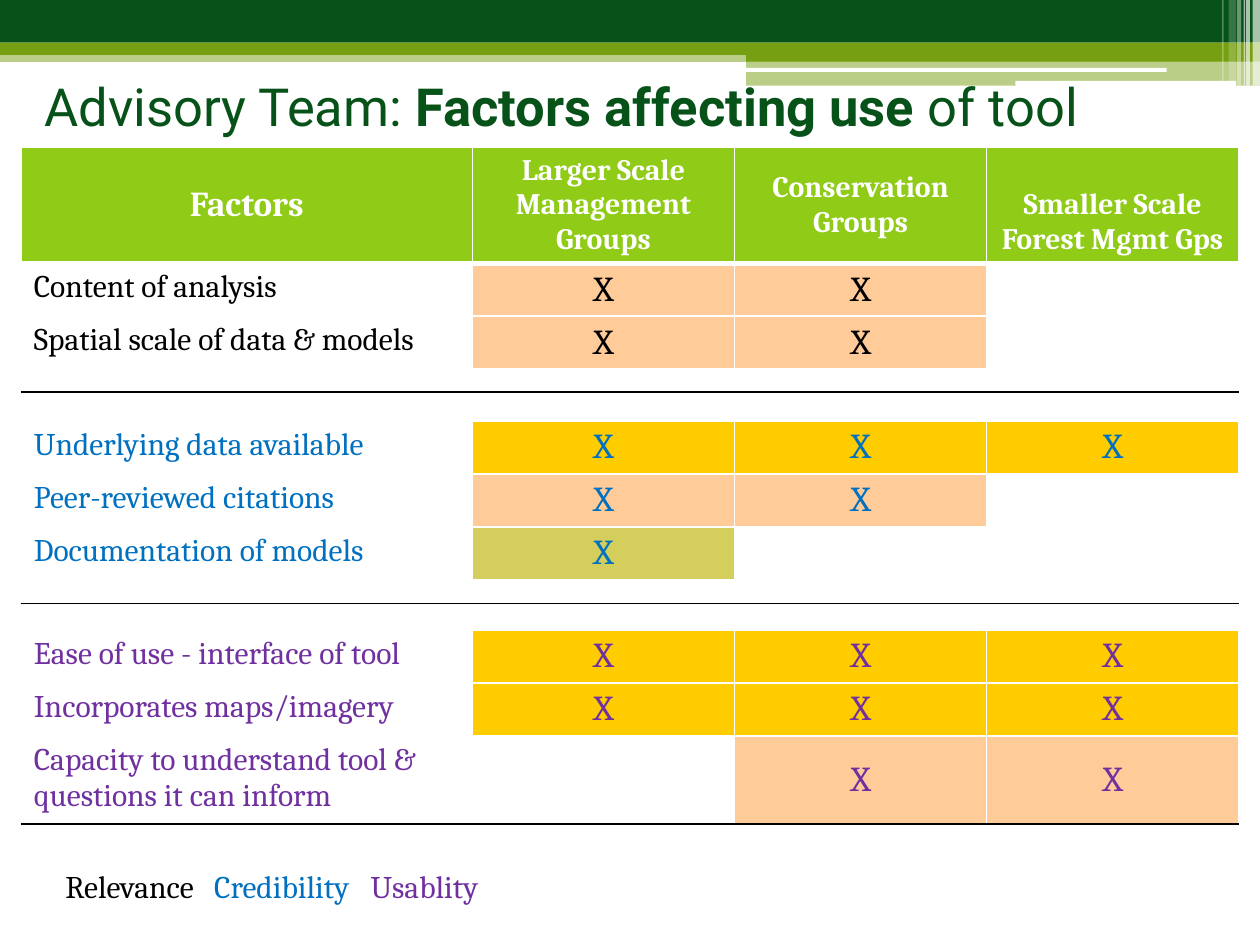
from lxml.etree import SubElement
from pptx import Presentation
from pptx.dml.color import RGBColor
from pptx.enum.shapes import MSO_SHAPE as Shape
from pptx.enum.text import MSO_ANCHOR as Anchor, PP_ALIGN as Align
from pptx.oxml import parse_xml
from pptx.oxml.ns import nsdecls, qn
from pptx.util import Cm, Pt

COLORS = {
    "forest": "065218", "olive": "769F11", "lime": "8FCB17", "white": "FFFFFF",
    "black": "000000", "blue": "0070C0", "purple": "7030A0",
    "peach": "FFCC99", "gold": "FFCC00", "moss": "D4CF5D",
}
BODY_FONT = "Cambria"
HEADERS = [
    ("Factors", 20, Anchor.MIDDLE),
    ("Larger Scale Management Groups", 17, Anchor.MIDDLE),
    ("Conservation Groups", 17, Anchor.MIDDLE),
    ("Smaller Scale Forest Mgmt Gps", 17, Anchor.BOTTOM),
]
GROUPS = [
    ("Relevance", "black", [
        ("Content of analysis", ["peach", "peach", None]),
        ("Spatial scale of data & models", ["peach", "peach", None]),
    ]),
    ("Credibility", "blue", [
        ("Underlying data available", ["gold", "gold", "gold"]),
        ("Peer-reviewed citations", ["peach", "peach", None]),
        ("Documentation of models", ["moss", None, None]),
    ]),
    ("Usablity", "purple", [
        ("Ease of use - interface of tool", ["gold", "gold", "gold"]),
        ("Incorporates maps/imagery", ["gold", "gold", "gold"]),
        ("Capacity to understand tool & questions it can inform",
         [None, "peach", "peach"]),
    ]),
]
COLUMN_WIDTHS = [9.09, 5.29, 5.08, 5.08]
HEADER_HEIGHT, ROW_HEIGHT, LAST_HEIGHT = 2.3, 1.06, 1.78
GAP_HEIGHTS = [(0.46, 0.58), (0.48, 0.53)]


def rgb(name):
    """Return the named colour."""
    return RGBColor.from_string(COLORS[name])


def style_span(span, size, color, font=BODY_FONT, bold=False):
    """Format one run of text."""
    span.font.size, span.font.name, span.font.bold = Pt(size), font, bold
    span.font.color.rgb = rgb(color)


def add_bar(page, box, color, opacity=100, kind=Shape.RECTANGLE):
    """Add a borderless bar with the given opacity in percent."""
    bar = page.shapes.add_shape(kind, *map(Cm, box))
    bar.shadow.inherit = False
    bar.line.fill.background()
    bar.fill.solid()
    bar.fill.fore_color.rgb = rgb(color)
    if opacity < 100:
        tint = bar.fill._xPr.find(".//" + qn("a:srgbClr"))
        SubElement(tint, qn("a:alpha"), val=str(opacity * 1000))


def add_banner(page, box):
    """Draw the layered green banner with its light stripes."""
    left, top, width, height = box
    split = left + 15.04
    right = width - 15.04
    add_bar(page, (left, top + 1.02, width, 0.23), "olive", 50)
    add_bar(page, (left, top, width, 0.86), "forest")
    add_bar(page, (left, top + 0.86, width, 0.25), "olive")
    add_bar(page, (split, top + 0.99, right, 0.25), "olive")
    add_bar(page, (split, top + 1.22, right, 0.51), "olive", 50)
    for x, y, length, thick in [(15.01, 1.37, 8.51, 0.08), (20.47, 1.63, 4.45, 0.1)]:
        add_bar(page, (left + x, top + y, length, thick), "white",
                kind=Shape.ROUNDED_RECTANGLE)
    stripes = [(0.15, 0.15, 0, 65), (0.28, 0.08, 0, 65), (0.33, 0.03, 0, 60),
               (0.46, 0.08, 0, 40), (0.63, 0.15, 0.1, 20), (0.76, 0.03, 0.1, 30)]
    for inset, thick, short, opacity in stripes:
        add_bar(page, (left + width - inset, top, thick, height - short),
                "white", opacity)


def add_title(page, box):
    """Place the title in front of the banner and emphasise its middle part."""
    title = page.shapes.title
    page.shapes.element.append(title.element)
    title.left, title.top, title.width, title.height = map(Cm, box)
    title.text_frame.vertical_anchor = Anchor.MIDDLE
    para = title.text_frame.paragraphs[0]
    para.alignment = Align.LEFT
    for text, bold in [("Advisory Team: ", False),
                       ("Factors affecting use ", True), ("of tool", False)]:
        span = para.add_run()
        span.text = text
        style_span(span, 30, "forest", "Roboto", bold)


def set_borders(cell, top="white", bottom="white", bottom_width=1):
    """Give a cell white sides and the chosen top and bottom lines."""
    sides = [("L", "white", 1), ("R", "white", 1),
             ("T", top, 1), ("B", bottom, bottom_width)]
    properties = cell._tc.get_or_add_tcPr()
    for index, (side, color, width) in enumerate(sides):
        properties.insert(index, parse_xml(
            f'<a:ln{side} {nsdecls("a")} w="{Pt(width)}"><a:solidFill>'
            f'<a:srgbClr val="{COLORS[color]}"/></a:solidFill></a:ln{side}>'))


def fill_cell(cell, text="", size=18, color="black", fill=None,
              align=Align.CENTER, anchor=Anchor.TOP, bold=False):
    """Set the text and background of one cell."""
    if fill:
        cell.fill.solid()
        cell.fill.fore_color.rgb = rgb(fill)
    else:
        cell.fill.background()
    cell.vertical_anchor = anchor
    para = cell.text_frame.paragraphs[0]
    if text:
        para.text = text
        para.alignment = align
        style_span(para.runs[0], size, color, bold=bold)
    else:
        SubElement(para._p, qn("a:endParaRPr"), sz=str(size * 100))


def add_gap(table, row, heights):
    """Make two thin empty rows with a black rule between them."""
    for offset, height in enumerate(heights):
        table.rows[row + offset].height = Cm(height)
        for cell in table.rows[row + offset].cells:
            cell.margin_top = cell.margin_bottom = 0
            fill_cell(cell, size=6)
            set_borders(cell, *(("black", "white") if offset else ("white", "black")))


def add_factor(table, row, label, marks, color, is_last):
    """Fill one row with a factor and its marks."""
    table.rows[row].height = Cm(LAST_HEIGHT if is_last else ROW_HEIGHT)
    cells = list(table.rows[row].cells)
    fill_cell(cells[0], label, 18, color, align=Align.LEFT)
    for cell, fill in zip(cells[1:], marks):
        fill_cell(cell, "X" if fill else "", 20 if fill else 18, color, fill,
                  anchor=Anchor.MIDDLE if is_last else Anchor.TOP)
    for cell in cells:
        set_borders(cell, bottom="black" if is_last else "white")


def add_factor_table(page, box):
    """Build the table of factors by user group."""
    row_count = 1 + sum(len(factors) for *_, factors in GROUPS) + 2 * len(GAP_HEIGHTS)
    table = page.shapes.add_table(row_count, len(HEADERS), *map(Cm, box)).table
    table.first_row = table.horz_banding = False
    for column, width in zip(table.columns, COLUMN_WIDTHS):
        column.width = Cm(width)
    table.rows[0].height = Cm(HEADER_HEIGHT)
    for cell, (text, size, anchor) in zip(table.rows[0].cells, HEADERS):
        fill_cell(cell, text, size, "white", "lime", anchor=anchor, bold=True)
        set_borders(cell, bottom_width=3)
    row = 1
    for group, (_, color, factors) in enumerate(GROUPS):
        for label, marks in factors:
            add_factor(table, row, label, marks, color, row == row_count - 1)
            row += 1
        if group < len(GAP_HEIGHTS):
            add_gap(table, row, GAP_HEIGHTS[group])
            row += 2


def add_legend(page, box):
    """Name the factor groups in their colours, spaced by tab stops."""
    frame = page.shapes.add_textbox(*map(Cm, box)).text_frame
    frame.word_wrap = True
    para = frame.paragraphs[0]
    stops = SubElement(para._p.get_or_add_pPr(), qn("a:tabLst"))
    for position in (3, 6.15):
        SubElement(stops, qn("a:tab"), pos=str(Cm(position)), algn="l")
    for index, (name, color, _) in enumerate(GROUPS):
        span = para.add_run()
        span.text = f"\t{name}" if index else name
        style_span(span, 18, color)


def main():
    """Assemble and save the slide."""
    deck = Presentation()
    deck.slide_width, deck.slide_height = Cm(25.4), Cm(19.05)
    page = deck.slides.add_slide(deck.slide_layouts[5])
    add_banner(page, (0, 0, 25.4, 1.73))
    add_title(page, (0.64, 1.07, 22.86, 2.11))
    add_factor_table(page, (0.43, 2.97, 24.54, 13.65))
    add_legend(page, (1.07, 17.35, 9.68, 1.02))
    deck.save("out.pptx")


if __name__ == "__main__":
    main()
